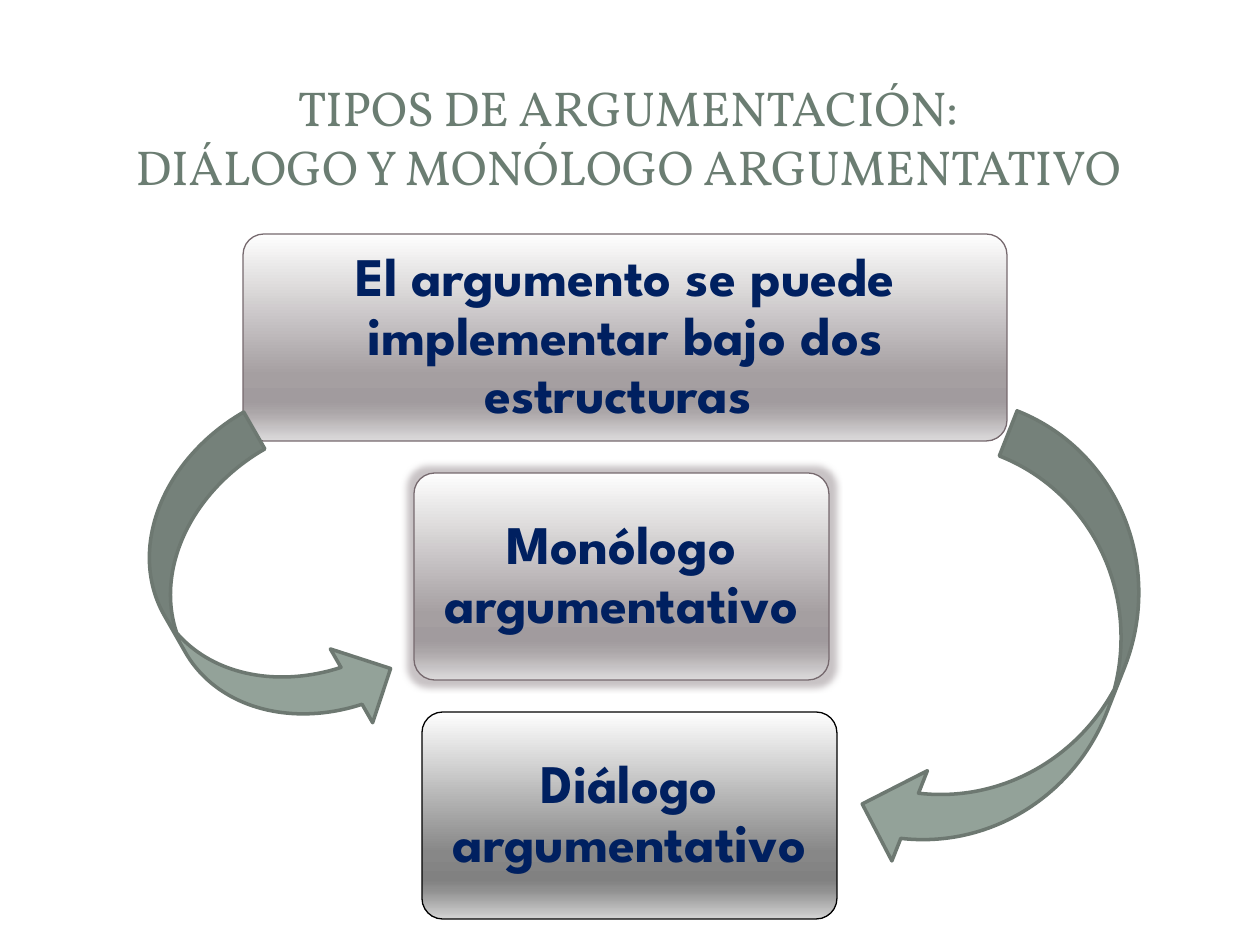
import lxml.etree
import pptx
import pptx.dml.color
import pptx.enum.shapes
import pptx.enum.text
import pptx.oxml.ns
import pptx.util
from dataclasses import dataclass

EMU_PER_INCH, PX_PER_INCH = 914400, 126
SHAPES = pptx.enum.shapes.MSO_SHAPE
rgb = pptx.dml.color.RGBColor.from_string
qn = pptx.oxml.ns.qn


@dataclass(frozen=True)
class Theme:
    title_font: str = "Vollkorn"
    title_size: int = 28
    title_color: str = "6B7D72"
    box_font: str = "League Spartan"
    box_size: int = 31
    box_color: str = "002060"
    mauve_line: str = "76696E"
    mauve_stops: tuple = ("FEFEFE", "A59FA1", "A19B9E", "ABA6A8", "DCDADB")
    gray_line: str = "000000"
    gray_stops: tuple = ("FEFEFE", "878787", "818181", "909090", "D3D3D3")
    stop_places: tuple = (0, 68, 81, 86, 100)
    glow: str = "76696E"
    arrow_fill: str = "93A299"
    arrow_line: str = "6D7871"


theme = Theme()


def px(*lengths):
    return [pptx.util.Emu(n * EMU_PER_INCH // PX_PER_INCH) for n in lengths]


def write_centred(frame, text, font, size, color, bold=False):
    frame.word_wrap = True
    frame.vertical_anchor = pptx.enum.text.MSO_ANCHOR.MIDDLE
    frame.text = text
    para = frame.paragraphs[0]
    para.alignment = pptx.enum.text.PP_ALIGN.CENTER
    for span in para.runs:
        span.font.name = font
        span.font.size = pptx.util.Pt(size)
        span.font.bold = bold
        span.font.color.rgb = rgb(color)


deck = pptx.Presentation()
deck.slide_width, deck.slide_height = px(1260, 945)
page = deck.slides.add_slide(deck.slide_layouts[6])

title = page.shapes.add_textbox(*px(15, 57, 1226, 159))
write_centred(title.text_frame,
              "TIPOS DE ARGUMENTACIÓN:\vDIÁLOGO Y MONÓLOGO ARGUMENTATIVO",
              theme.title_font, theme.title_size, theme.title_color)

# Boxes: text, left, top, width, line colour, gradient colours, glow
boxes = [
    ("El argumento se puede implementar bajo dos estructuras ",
     243, 234, 764, theme.mauve_line, theme.mauve_stops, False),
    ("Monólogo argumentativo",
     414, 473, 415, theme.mauve_line, theme.mauve_stops, True),
    ("Diálogo argumentativo",
     422, 712, 415, theme.gray_line, theme.gray_stops, False),
]
for text, left, top, width, line_color, stop_colors, glows in boxes:
    box = page.shapes.add_shape(SHAPES.ROUNDED_RECTANGLE, *px(left, top, width, 207))
    box.adjustments[0] = 0.1
    box.shadow.inherit = False
    box.line.color.rgb = rgb(line_color)
    box.line.width = pptx.util.Pt(0.75)

    box.fill.gradient()
    box.fill.gradient_angle = 270
    properties = box.element.spPr
    stops = properties.find(".//" + qn("a:gsLst"))
    for stop in list(stops):
        stops.remove(stop)
    for place, color in zip(theme.stop_places, stop_colors):
        stop = lxml.etree.SubElement(stops, qn("a:gs"), pos=str(place * 1000))
        lxml.etree.SubElement(stop, qn("a:srgbClr"), val=color)

    if glows:
        effects = properties.find(qn("a:effectLst"))
        glow = lxml.etree.SubElement(effects, qn("a:glow"), rad=str(px(13)[0]))
        tint = lxml.etree.SubElement(glow, qn("a:srgbClr"), val=theme.glow)
        lxml.etree.SubElement(tint, qn("a:alpha"), val="40000")

    frame = box.text_frame
    frame.margin_left, frame.margin_top, frame.margin_right, frame.margin_bottom = px(3, 3, 3, 3)
    write_centred(frame, text, theme.box_font, theme.box_size, theme.box_color, bold=True)
    frame.paragraphs[0].line_spacing = 0.9

arrows = [
    (SHAPES.CURVED_RIGHT_ARROW, (169, 432, 170, 338), 330.2),
    (SHAPES.CURVED_LEFT_ARROW, (924, 430, 194, 471), 21.5),
]
for kind, place, turn in arrows:
    arrow = page.shapes.add_shape(kind, *px(*place))
    arrow.rotation = turn
    arrow.shadow.inherit = False
    arrow.fill.solid()
    arrow.fill.fore_color.rgb = rgb(theme.arrow_fill)
    arrow.line.color.rgb = rgb(theme.arrow_line)
    arrow.line.width = pptx.util.Pt(2)

deck.save("out.pptx")
